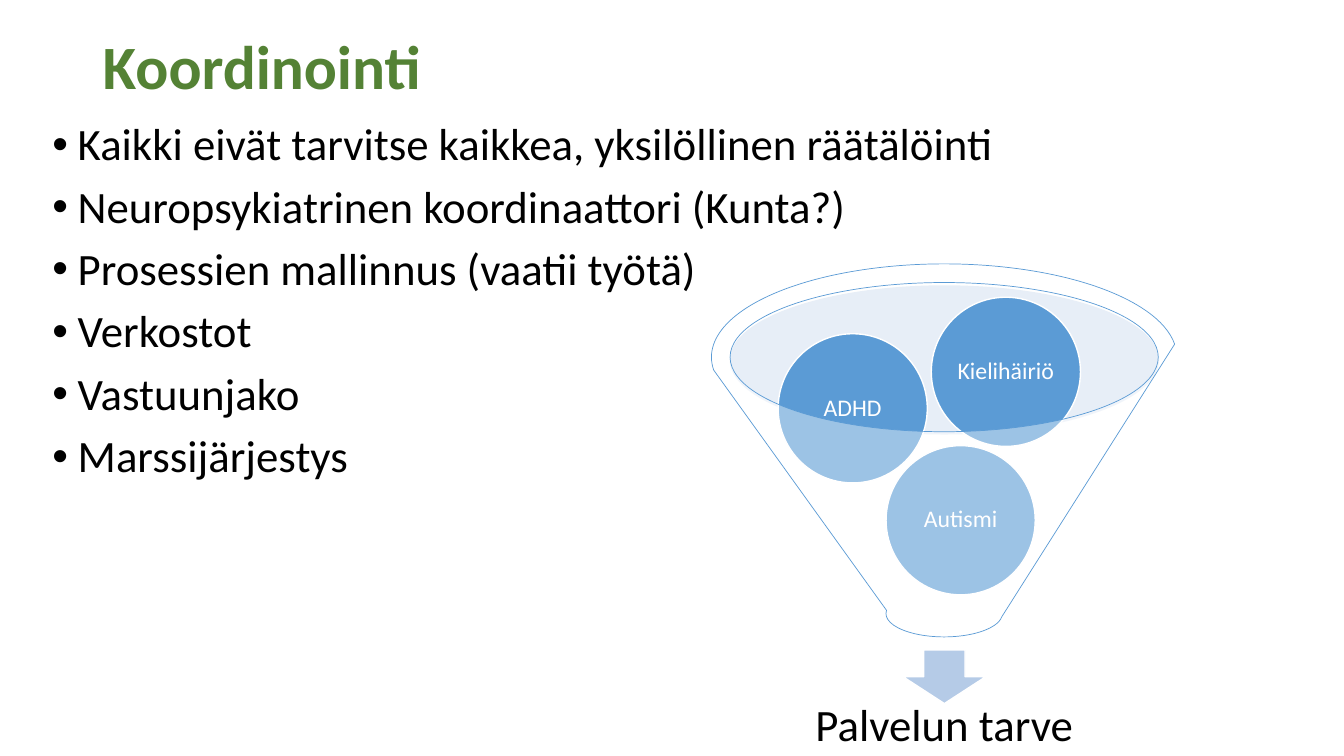
from dataclasses import dataclass

from lxml.etree import SubElement
from pptx import Presentation
from pptx.dml.color import RGBColor
from pptx.enum.shapes import MSO_SHAPE as Preset
from pptx.enum.text import MSO_ANCHOR as Anchor, PP_ALIGN as Align
from pptx.oxml.ns import qn
from pptx.shapes.autoshape import Shape
from pptx.slide import Slide
from pptx.text.text import TextFrame
from pptx.util import Cm, Pt


@dataclass(frozen=True)
class Theme:
    font: str = "Calibri"
    title_size: int = 44
    body_size: int = 32
    need_size: int = 17
    title: str = "548235"
    text: str = "000000"
    white: str = "FFFFFF"
    blue: str = "5B9BD5"
    rim: str = "C4D5EB"
    arrow: str = "B5CBE7"


@dataclass(frozen=True)
class Box:
    left: float
    top: float
    width: float
    height: float

    def lengths(self) -> tuple[Cm, Cm, Cm, Cm]:
        return Cm(self.left), Cm(self.top), Cm(self.width), Cm(self.height)


@dataclass(frozen=True)
class Need:
    label: str
    left: float
    top: float


THEME = Theme()
NEED_DIAMETER = 3.76
BULLET_INDENT = Cm(0.64)
TOPICS = [
    "Kaikki eivät tarvitse kaikkea, yksilöllinen räätälöinti",
    "Neuropsykiatrinen koordinaattori (Kunta?)",
    "Prosessien mallinnus (vaatii työtä)",
    "Verkostot",
    "Vastuunjako",
    "Marssijärjestys",
]
NEEDS = [
    Need("Autismi", 22.33, 11.23),
    Need("ADHD", 19.61, 8.41),
    Need("Kielihäiriö", 23.47, 7.49),
]


def write(frame: TextFrame, text: str, size: int, color: str,
          align: Align = Align.LEFT, bold: bool = False) -> None:
    frame.word_wrap = True
    frame.text = text
    for paragraph in frame.paragraphs:
        paragraph.alignment = align
        paragraph.line_spacing = 0.9
        for run in paragraph.runs:
            run.font.name = THEME.font
            run.font.size = Pt(size)
            run.font.bold = bold
            run.font.color.rgb = RGBColor.from_string(color)


def set_insets(frame: TextFrame, inset: float) -> None:
    frame.margin_left = frame.margin_right = Cm(inset)
    frame.margin_top = frame.margin_bottom = Cm(inset)


def add_text(slide: Slide, box: Box) -> TextFrame:
    return slide.shapes.add_textbox(*box.lengths()).text_frame


def add_preset(slide: Slide, preset: Preset, box: Box, fill: str, line: str | None = None,
               line_width: float = 1, opacity: int = 100) -> Shape:
    """Add a shadowless shape; opacity is the fill's, in percent."""
    shape = slide.shapes.add_shape(preset, *box.lengths())
    shape.shadow.inherit = False
    shape.fill.solid()
    shape.fill.fore_color.rgb = RGBColor.from_string(fill)
    if opacity < 100:
        color = shape.fill._xPr.find(qn("a:solidFill"))[0]
        SubElement(color, qn("a:alpha"), val=str(opacity * 1000))
    if line is None:
        shape.line.fill.background()
    else:
        shape.line.color.rgb = RGBColor.from_string(line)
        shape.line.width = Pt(line_width)
    return shape


def add_topics(slide: Slide) -> None:
    frame = add_text(slide, Box(1.07, 2.95, 29.21, 11.53))
    write(frame, "\n".join(TOPICS), THEME.body_size, THEME.text)
    for index, paragraph in enumerate(frame.paragraphs):
        properties = paragraph._p.get_or_add_pPr()
        properties.set("marL", str(BULLET_INDENT))
        properties.set("indent", str(-BULLET_INDENT))
        SubElement(properties, qn("a:buFont"), typeface="Arial")
        SubElement(properties, qn("a:buChar"), char="•")
        if index:
            paragraph.space_before = Pt(10)


def add_need(slide: Slide, need: Need) -> None:
    box = Box(need.left, need.top, NEED_DIAMETER, NEED_DIAMETER)
    frame = add_preset(slide, Preset.OVAL, box, THEME.blue, THEME.white).text_frame
    write(frame, need.label, THEME.need_size, THEME.white, Align.CENTER)
    set_insets(frame, 0.05)
    frame.vertical_anchor = Anchor.MIDDLE


def add_funnel(slide: Slide) -> None:
    add_preset(slide, Preset.OVAL, Box(18.39, 7.19, 10.82, 3.76), THEME.rim, opacity=40)
    add_preset(slide, Preset.DOWN_ARROW, Box(22.76, 16.38, 2.08, 1.35), THEME.arrow, THEME.white)

    outcome = add_text(slide, Box(18.77, 17.07, 10.06, 2.51))
    write(outcome, "Palvelun tarve", THEME.body_size, THEME.text, Align.CENTER)
    set_insets(outcome, 0.64)
    outcome.vertical_anchor = Anchor.MIDDLE

    for need in NEEDS:
        add_need(slide, need)
    add_preset(slide, Preset.FUNNEL, Box(17.93, 6.65, 11.73, 9.4), THEME.white, THEME.blue,
               line_width=0.5, opacity=40)


def main() -> None:
    deck = Presentation()
    deck.slide_width, deck.slide_height = Cm(33.87), Cm(19.05)
    slide = deck.slides.add_slide(deck.slide_layouts[6])

    title = add_text(slide, Box(2.34, -0.08, 29.21, 3.68))
    write(title, "Koordinointi", THEME.title_size, THEME.title, bold=True)
    title.vertical_anchor = Anchor.MIDDLE

    add_topics(slide)
    add_funnel(slide)
    deck.save("out.pptx")


if __name__ == "__main__":
    main()
